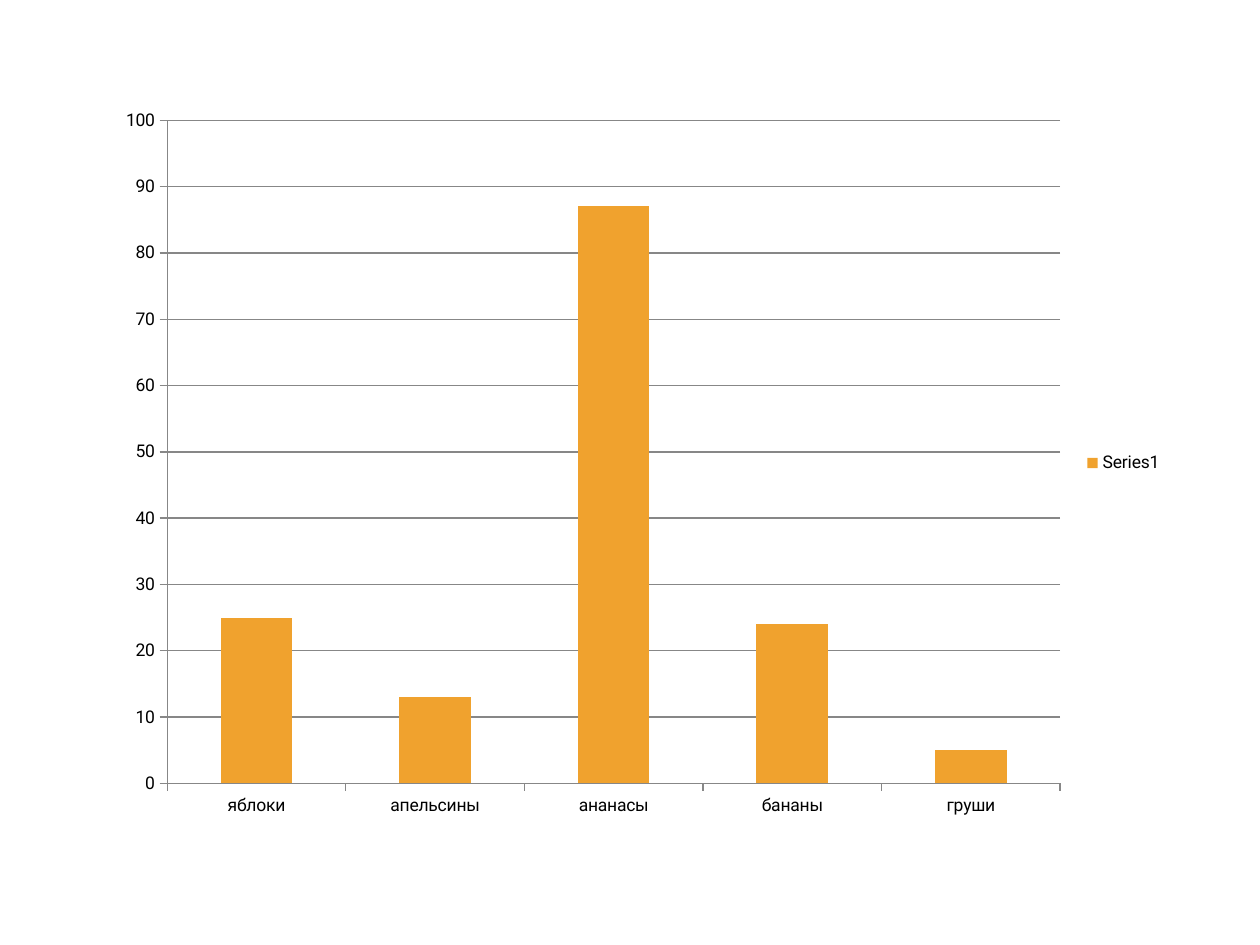
from dataclasses import dataclass

from pptx import Presentation
from pptx import util as u
from pptx.chart.data import CategoryChartData
from pptx.dml.color import RGBColor
from pptx.enum import chart as ch

COLORS = {"bar": "F0A22E", "label": "000000", "rule": "878787"}
FONT = "Roboto"
LABEL_SIZE = 10
SLIDE_WIDTH, SLIDE_HEIGHT = u.Inches(10), u.Inches(7.5)


@dataclass(frozen=True)
class Harvest:
    fruit: str
    amount: int


HARVESTS = [
    Harvest("яблоки", 25),
    Harvest("апельсины", 13),
    Harvest("ананасы", 87),
    Harvest("бананы", 24),
    Harvest("груши", 5),
]


def color(name: str) -> RGBColor:
    return RGBColor.from_string(COLORS[name])


def style_rule(rule) -> None:
    rule.line.color.rgb = color("rule")
    rule.line.width = u.Pt(0.75)


def style_axis(axis) -> None:
    axis.major_tick_mark = ch.XL_TICK_MARK.OUTSIDE
    axis.minor_tick_mark = ch.XL_TICK_MARK.NONE
    style_rule(axis.format)


def add_fruit_chart(slide, harvests: list[Harvest]) -> None:
    fruit_data = CategoryChartData()
    fruit_data.categories = [harvest.fruit for harvest in harvests]
    fruit_data.add_series("Series1", [harvest.amount for harvest in harvests])
    fruit_chart = slide.shapes.add_chart(
        ch.XL_CHART_TYPE.COLUMN_CLUSTERED,
        u.Inches(0.83),
        u.Inches(0.76),
        int(SLIDE_WIDTH * 0.85),
        u.Inches(5.83),
        fruit_data,
    ).chart

    fruit_chart.has_title = False
    fruit_chart.font.name = FONT
    fruit_chart.font.size = u.Pt(LABEL_SIZE)
    fruit_chart.font.color.rgb = color("label")
    fruit_chart.has_legend = True
    fruit_chart.legend.position = ch.XL_LEGEND_POSITION.RIGHT
    fruit_chart.legend.include_in_layout = False

    bars = fruit_chart.plots[0]
    bars.vary_by_categories = False
    bars.gap_width = 150
    bars.series[0].format.fill.solid()
    bars.series[0].format.fill.fore_color.rgb = color("bar")

    amounts = fruit_chart.value_axis
    for axis in (fruit_chart.category_axis, amounts):
        style_axis(axis)
    amounts.minimum_scale, amounts.maximum_scale = 0, 100
    amounts.major_unit = 10
    amounts.has_major_gridlines = True
    style_rule(amounts.major_gridlines.format)


def main() -> None:
    deck = Presentation()
    deck.slide_width, deck.slide_height = SLIDE_WIDTH, SLIDE_HEIGHT
    add_fruit_chart(deck.slides.add_slide(deck.slide_layouts[6]), HARVESTS)
    deck.save("out.pptx")


if __name__ == "__main__":
    main()
